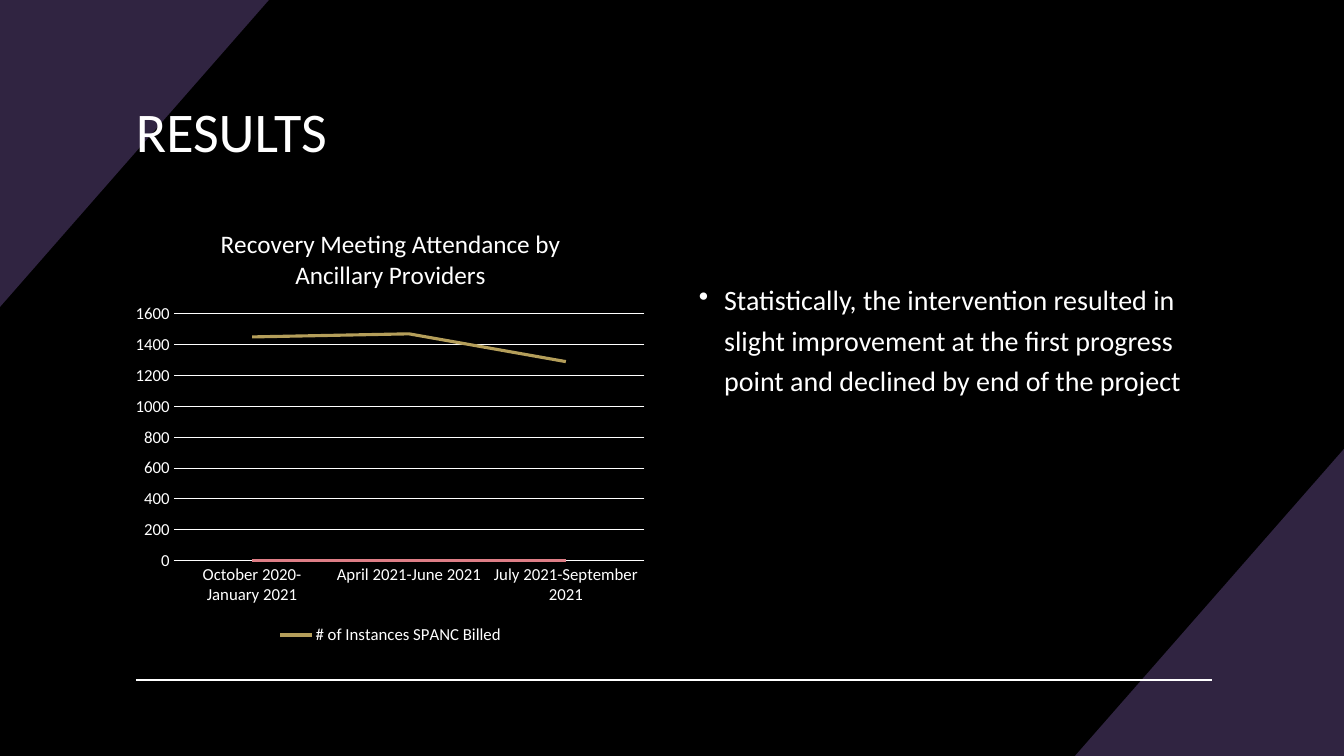
from dataclasses import dataclass

from lxml import etree
from pptx import Presentation
from pptx import util as u
from pptx.chart.data import CategoryChartData
from pptx.dml.color import RGBColor
from pptx.enum import chart as ch, shapes, text
from pptx.oxml import parse_xml
from pptx.oxml.ns import nsdecls, qn

PX = 914400 / 100.8
W, H = 1344, 756


@dataclass(frozen=True)
class Theme:
    font: str = "Calibri"
    back: RGBColor = RGBColor(0, 0, 0)
    ink: RGBColor = RGBColor(0xFF, 0xFF, 0xFF)
    corner: RGBColor = RGBColor(0x30, 0x24, 0x41)
    series: tuple = tuple(map(RGBColor.from_string, ("B49E5A", "D78962", "DE7E86")))
    title: int = 40
    body: int = 20
    chart_title: int = 18
    label: int = 12


T = Theme()

PERIODS = ("October 2020-January 2021", "April 2021-June 2021", "July 2021-September 2021")
ATTENDANCE = {
    "# of Instances SPANC Billed": (1450, 1470, 1290),
    "Series 2": (0, 0, 0),
    "Series 3": (0, 0, 0),
}


def px(*lengths):
    return [round(n * PX) for n in lengths]


def set_font(font, size):
    font.name, font.size, font.bold = T.font, u.Pt(size), False
    font.color.rgb = T.ink


def add_corner(s, *points):
    fb = s.shapes.build_freeform(*px(*points[0]))
    fb.add_line_segments([px(*pt) for pt in points[1:]], close=True)
    sp = fb.convert_to_shape()
    sp.shadow.inherit = False
    sp.fill.solid()
    sp.fill.fore_color.rgb = T.corner
    sp.line.fill.background()


def add_backdrop(s, w, h):
    s.background.fill.solid()
    s.background.fill.fore_color.rgb = T.back
    cw, chh = 269, 307
    add_corner(s, (w, h - chh), (w, h), (w - cw, h))
    add_corner(s, (0, chh), (0, 0), (cw, 0))
    rule = s.shapes.add_connector(shapes.MSO_CONNECTOR.STRAIGHT, *px(136, h - 76, w - 132, h - 76))
    rule.line.color.rgb = T.ink
    rule.line.width = u.Pt(1)
    etree.SubElement(rule._element.spPr, qn("a:effectLst"))


def add_text(s, box, words, size, anchor):
    tf = s.shapes.add_textbox(*px(*box)).text_frame
    tf.word_wrap = True
    tf.vertical_anchor = anchor
    p = tf.paragraphs[0]
    p.text = words
    set_font(p.font, size)
    return p


def add_bullet(s, box, words):
    p = add_text(s, box, words, T.body, text.MSO_ANCHOR.TOP)
    p.line_spacing = 1.2
    p.space_before = u.Pt(10)
    pr = p._p.get_or_add_pPr()
    indent = u.Inches(0.25)
    pr.set("marL", str(indent))
    pr.set("indent", str(-indent))
    bullet = parse_xml(f'<a:buChar {nsdecls("a")} char="•"/>')
    pr.insert_element_before(bullet, "a:tabLst", "a:defRPr", "a:extLst")


def hide_legend_entries(legend, indexes):
    for i in reversed(indexes):
        legend._element.insert(1, parse_xml(
            f'<c:legendEntry {nsdecls("c")}><c:idx val="{i}"/><c:delete val="1"/></c:legendEntry>'))


def set_plot_box(chart, x, y, w, h):
    """Fix the inner plot area, given as fractions of the chart."""
    area = chart._chartSpace.chart.plotArea
    for old in area.findall(qn("c:layout")):
        area.remove(old)
    sizes = "".join(f'<c:{k} val="{v}"/>' for k, v in zip("xywh", (x, y, w, h)))
    area.insert(0, parse_xml(
        f'<c:layout {nsdecls("c")}><c:manualLayout><c:layoutTarget val="inner"/>'
        f'<c:xMode val="edge"/><c:yMode val="edge"/>{sizes}</c:manualLayout></c:layout>'))


def add_attendance_chart(s, box):
    data = CategoryChartData()
    data.categories = PERIODS
    for name, values in ATTENDANCE.items():
        data.add_series(name, values)
    chart = s.shapes.add_chart(ch.XL_CHART_TYPE.LINE, *px(*box), data).chart
    set_font(chart.font, T.label)

    chart.has_title = True
    p = chart.chart_title.text_frame.paragraphs[0]
    p.text = "Recovery Meeting Attendance by Ancillary Providers"
    set_font(p.font, T.chart_title)

    chart.has_legend = True
    chart.legend.position = ch.XL_LEGEND_POSITION.BOTTOM
    chart.legend.include_in_layout = False
    set_font(chart.legend.font, T.label)
    hide_legend_entries(chart.legend, (1, 2))

    for axis in (chart.category_axis, chart.value_axis):
        axis.major_tick_mark = axis.minor_tick_mark = ch.XL_TICK_MARK.NONE
        set_font(axis.tick_labels.font, T.label)
    values = chart.value_axis
    values.minimum_scale, values.maximum_scale, values.major_unit = 0, 1600, 200
    values.format.line.fill.background()
    values.has_major_gridlines = True
    for line in (chart.category_axis.format.line, values.major_gridlines.format.line):
        line.color.rgb = T.ink
        line.width = u.Pt(0.75)

    for series, color in zip(chart.plots[0].series, T.series):
        series.smooth = False
        series.marker.style = ch.XL_MARKER_STYLE.NONE
        series.format.line.color.rgb = color
        series.format.line.width = u.Pt(2.25)
    set_plot_box(chart, 0.09, 0.24, 0.89, 0.56)


def add_results_slide(prs):
    s = prs.slides.add_slide(prs.slide_layouts[6])
    add_backdrop(s, W, H)
    left, top, col_w = 126, 208, 529
    add_text(s, (left, 83, 1092, 94), "RESULTS", T.title, text.MSO_ANCHOR.MIDDLE)
    add_attendance_chart(s, (left, top, col_w, 441))
    add_bullet(s, (left + 563, top + 63, col_w, 378),
               "Statistically, the intervention resulted in slight improvement "
               "at the first progress point and declined by end of the project")


def main():
    prs = Presentation()
    prs.slide_width, prs.slide_height = px(W, H)
    add_results_slide(prs)
    prs.save("out.pptx")


if __name__ == "__main__":
    main()
